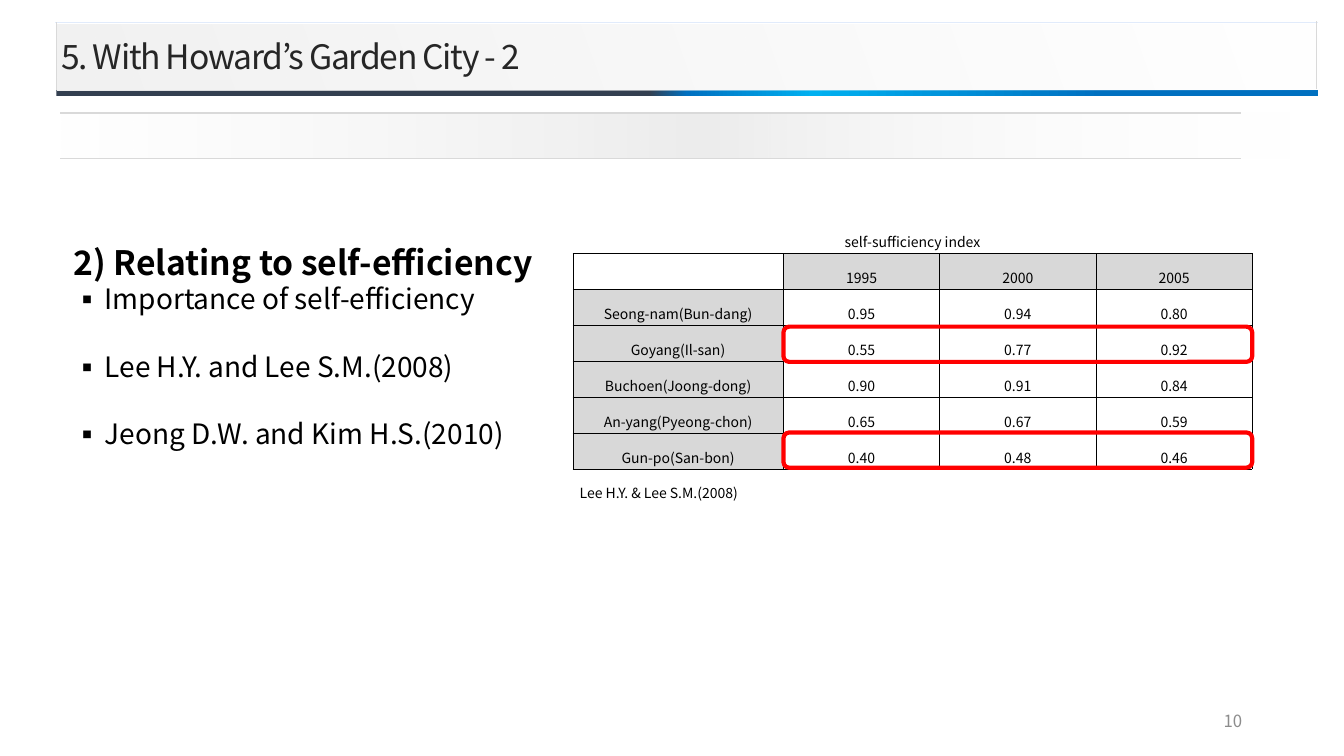
from pptx import Presentation
from pptx.util import Inches, Pt
from pptx.dml.color import RGBColor as RGB
from pptx.enum.shapes import MSO_SHAPE as Shape, MSO_CONNECTOR as Link
from pptx.enum.text import PP_ALIGN as Align, MSO_ANCHOR as Anchor
from pptx.oxml import parse_xml
from pptx.oxml.ns import qn
from lxml.etree import SubElement as Sub

FONT = "Noto Sans CJK KR"
NS = 'xmlns:a="http://schemas.openxmlformats.org/drawingml/2006/main"'
COL = {"ink": "000000", "title": "262626", "page": "8C8C8C", "head": "D8D8D8",
       "rule": "D9D9D9", "edge": "E1EBFB", "pale": "F2F2F2", "white": "FFFFFF",
       "navy": "333F50", "blue": "0070C0", "sky": "00B0F0", "red": "FF0000"}

deck = Presentation()
deck.slide_width, deck.slide_height = Inches(13.33), Inches(7.5)
slide = deck.slides.add_slide(deck.slide_layouts[6])
shapes = slide.shapes


def write(para, text, size, tint="ink", bold=False):
    run = para.add_run()
    run.text = text
    font = run.font
    font.size, font.bold, font.name = Pt(size), bold, FONT
    font.color.rgb = RGB.from_string(COL[tint])
    Sub(run._r.get_or_add_rPr(), qn("a:ea")).set("typeface", FONT)
    return run


def frame(left, top, width, height):
    text = shapes.add_textbox(*map(Inches, (left, top, width, height))).text_frame
    text.word_wrap = True
    return text


bands = [
    ((0.56, 0.89, 12.51, 0.06), 0,
     [(47, "navy", 100), (50, "blue", 100), (60, "sky", 100), (83, "blue", 100)]),
    ((0.57, 0.24, 12.52, 0.66), 160, [(0, "pale", 0), (100, "pale", 100)]),
    ((0.61, 1.12, 12.2, 0.45), 0,
     [(1, "white", 30), (52, "rule", 48), (100, "white", 0)]),
]
for box, angle, stops in bands:
    band = shapes.add_shape(Shape.RECTANGLE, *map(Inches, box))
    marks = "".join(
        f'<a:gs pos="{pos * 1000}"><a:srgbClr val="{COL[tint]}">'
        f'<a:alpha val="{alpha * 1000}"/></a:srgbClr></a:gs>'
        for pos, tint, alpha in stops)
    band._element.spPr.insert(2, parse_xml(
        f'<a:gradFill {NS} rotWithShape="1"><a:gsLst>{marks}</a:gsLst>'
        f'<a:lin ang="{angle * 60000}" scaled="0"/></a:gradFill>'))
    band.line.fill.background()
    band.shadow.inherit = False

rules = [
    (0.55, 0.22, 13.07, 0.22, "edge", 0.25),
    (0.56, 0.22, 0.56, 0.89, "rule", 0.5),
    (13.06, 0.21, 13.06, 0.88, "rule", 0.5),
    (0.6, 1.12, 12.31, 1.12, "rule", 1),
    (0.6, 1.57, 12.31, 1.57, "rule", 1),
]
for *ends, tint, width in rules:
    rule = shapes.add_connector(Link.STRAIGHT, *map(Inches, ends))
    rule.line.color.rgb = RGB.from_string(COL[tint])
    rule.line.width = Pt(width)
    Sub(rule._element.spPr, qn("a:effectLst"))

title = frame(0.51, 0.29, 10.52, 0.5).paragraphs[0]
title.line_spacing = Pt(30)
run = write(title, "5. With Howard’s Garden City - 2", 24, "title")
run._r.get_or_add_rPr().set("spc", "-90")

page = frame(9.42, 6.95, 3, 0.4)
page.vertical_anchor = Anchor.MIDDLE
page.paragraphs[0].alignment = Align.RIGHT
write(page.paragraphs[0], "10", 12, "page")

body = frame(0.63, 2.33, 12.04, 2.52)
lead = body.paragraphs[0]
lead.line_spacing = Pt(30)
write(lead, "2) Relating to self-efficiency", 24, bold=True)
points = ["Importance of self-efficiency", "Lee H.Y. and Lee S.M.(2008)",
          "Jeong D.W. and Kim H.S.(2010)"]
for i, point in enumerate(points):
    para = body.add_paragraph()
    para.line_spacing = Pt(24)
    para.space_before = Pt(24 if i else 0)
    props = para._p.get_or_add_pPr()
    props.set("marL", str(Inches(0.31)))
    props.set("indent", str(-Inches(0.31)))
    Sub(props, qn("a:buFont")).set("typeface", FONT)
    Sub(props, qn("a:buChar")).set("char", "▪")
    write(para, point, 20)

rows = [
    ["self-sufficiency index", "", "", ""],
    ["", "1995", "2000", "2005"],
    ["Seong-nam(Bun-dang)", "0.95", "0.94", "0.80"],
    ["Goyang(Il-san)", "0.55", "0.77", "0.92"],
    ["Buchoen(Joong-dong)", "0.90", "0.91", "0.84"],
    ["An-yang(Pyeong-chon)", "0.65", "0.67", "0.59"],
    ["Gun-po(San-bon)", "0.40", "0.48", "0.46"],
    ["Lee H.Y. & Lee S.M.(2008)", "", "", ""],
]
last = len(rows) - 1
table = shapes.add_table(len(rows), 4, *map(Inches, (5.68, 2.16, 6.74, 2.85))).table
table.first_row = table.horz_banding = False
for col, width in zip(table.columns, [2.09, 1.55, 1.55, 1.55]):
    col.width = Inches(width)
for r in (0, last):
    table.cell(r, 0).merge(table.cell(r, 3))

for r, row in enumerate(rows):
    sides = {0: ["lnB"], last: ["lnT"]}.get(r, ["lnL", "lnR", "lnT", "lnB"])
    for c, text in enumerate(row):
        cell = table.cell(r, c)
        cell.vertical_anchor = Anchor.MIDDLE
        cell.margin_left = cell.margin_right = Inches(0.07)
        cell.margin_top = cell.margin_bottom = Inches(0.02)
        for side in ["lnL", "lnR", "lnT", "lnB"]:
            edge = Sub(cell._tc.get_or_add_tcPr(), qn("a:" + side), w=str(Pt(0.28)))
            if side in sides:
                Sub(Sub(edge, qn("a:solidFill")), qn("a:srgbClr")).set("val", COL["ink"])
            else:
                Sub(edge, qn("a:noFill"))
        if 0 < r < last and (r == 1) != (c == 0):
            cell.fill.solid()
            cell.fill.fore_color.rgb = RGB.from_string(COL["head"])
        else:
            cell.fill.background()
        para = cell.text_frame.paragraphs[0]
        if text:
            para.alignment = Align.LEFT if r == last else Align.CENTER
            para.line_spacing = 1.6
            write(para, text, 10)
        else:
            Sub(para._p, qn("a:endParaRPr")).set("sz", "1000")

for top in (3.24, 4.29):
    ring = shapes.add_shape(Shape.ROUNDED_RECTANGLE, *map(Inches, (7.77, top, 4.65, 0.35)))
    ring.fill.background()
    ring.line.color.rgb = RGB.from_string(COL["red"])
    ring.line.width = Pt(3)
    ring.shadow.inherit = False

deck.save("out.pptx")
